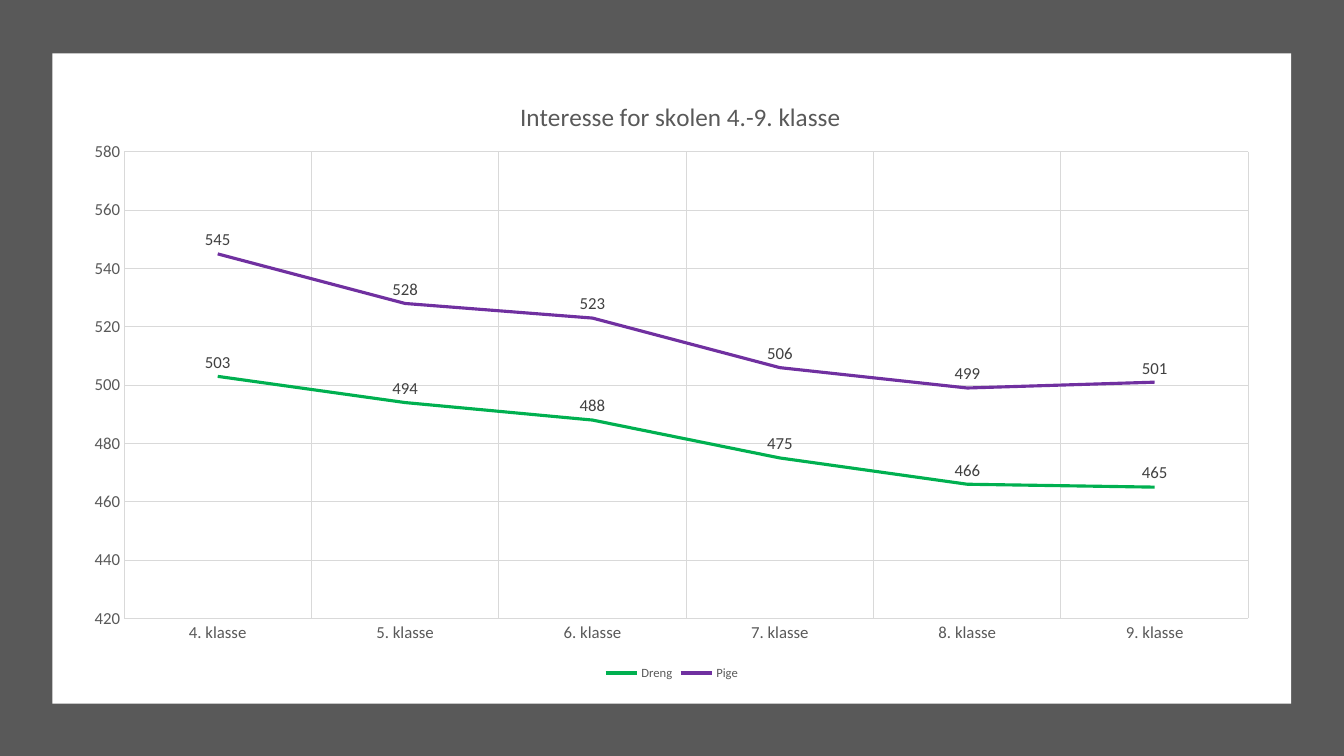
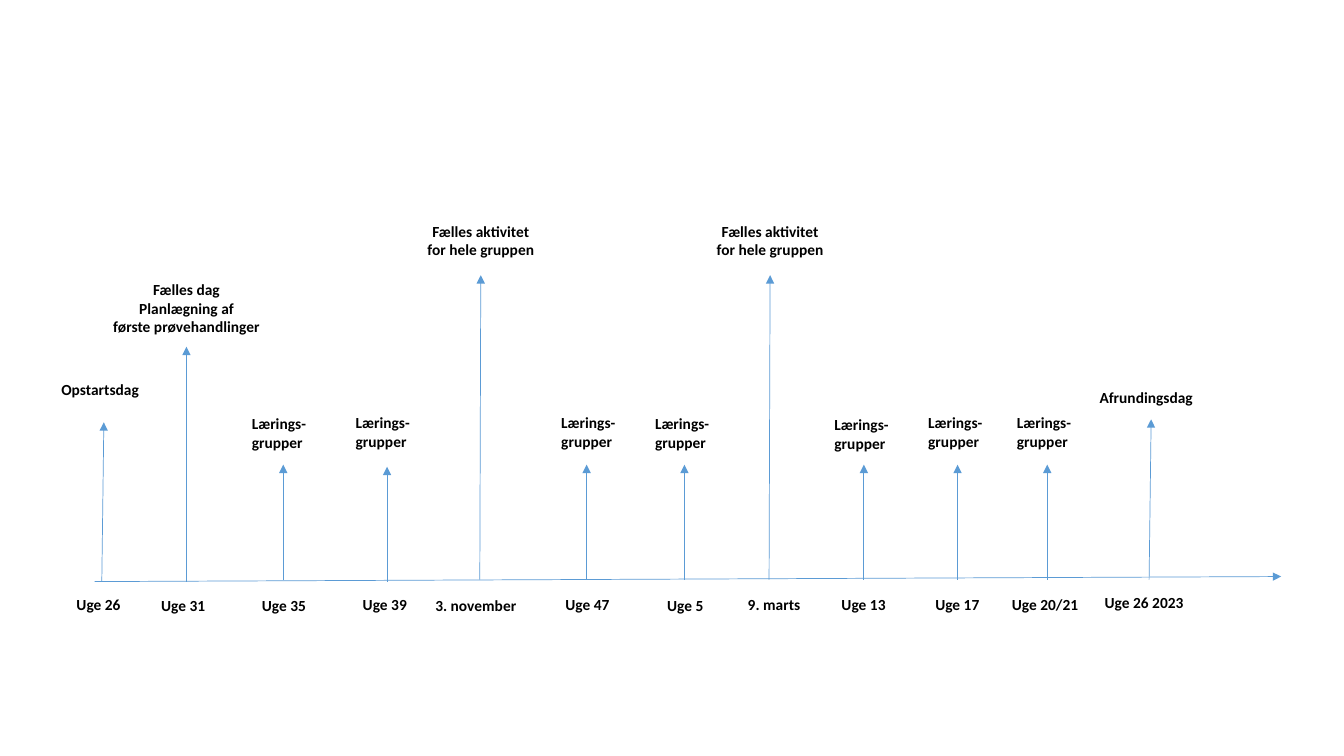
from dataclasses import dataclass

from lxml import etree
from pptx import Presentation
from pptx import util as u
from pptx.chart.data import CategoryChartData
from pptx.dml.color import RGBColor
from pptx.enum import chart as ch
from pptx.enum import shapes, text
from pptx.oxml.ns import qn

SLIDE_W, SLIDE_H = u.Inches(13.333), u.Inches(7.5)
COLUMNS, ROWS = 40, 22.5
FONT = "Calibri"
BLACK, WHITE, GREY, GRID = "000000", "FFFFFF", "595959", "D9D9D9"
LABEL, GREEN, PURPLE, BLUE = "404040", "00B050", "7030A0", "5B9BD5"

GRADES = [f"{grade}. klasse" for grade in range(4, 10)]
INTEREST = [
    ("Dreng", GREEN, (503, 494, 488, 475, 466, 465)),
    ("Pige", PURPLE, (545, 528, 523, 506, 499, 501)),
]


@dataclass
class Event:
    lines: tuple
    width: float
    centred: bool = False


KICKOFF = Event(("Opstartsdag",), 3.33)
PLANNING = Event(("Fælles dag", "Planlægning af", "første prøvehandlinger"), 5.76, True)
LEARNING = Event(("Lærings-", "grupper"), 2.58)
SHARED = Event(("Fælles aktivitet", "for hele gruppen"), 4.26, True)
CLOSING = Event(("Afrundingsdag",), 3.9)

# date, its left, top and width; stem foot; stem tip; event, its left and top
MILESTONES = [
    ("Uge 26", 1.98, 17.55, 2.13, (3.03, 17.31), (3.09, 12.57), KICKOFF, 1.53, 11.16),
    ("Uge 31", 4.5, 17.58, 2.13, (5.55, 17.31), (5.55, 10.32), PLANNING, 2.67, 8.19),
    ("Uge 35", 7.5, 17.58, 1.95, (8.43, 17.25), (8.43, 13.83), LEARNING, 7.2, 12.18),
    ("Uge 39", 10.5, 17.55, 1.95, (11.52, 17.31), (11.52, 13.89), LEARNING, 10.29, 12.15),
    ("3. november", 12.66, 17.58, 3.03, (14.28, 17.25), (14.31, 8.19), SHARED, 12.18, 6.45),
    ("Uge 47", 16.53, 17.55, 1.95, (17.46, 17.25), (17.46, 13.83), LEARNING, 16.41, 12.15),
    ("Uge 5", 19.56, 17.58, 1.71, (20.37, 17.25), (20.37, 13.83), LEARNING, 19.2, 12.18),
    ("9. marts", 21.96, 17.56, 2.19, (22.89, 17.25), (22.92, 8.19), SHARED, 20.79, 6.45),
    ("Uge 13", 24.75, 17.56, 1.95, (25.71, 17.25), (25.71, 13.83), LEARNING, 24.54, 12.21),
    ("Uge 17", 27.54, 17.55, 1.95, (28.5, 17.25), (28.5, 13.83), LEARNING, 27.33, 12.15),
    ("Uge 20/21", 29.82, 17.55, 2.61, (31.17, 17.25), (31.17, 13.83), LEARNING, 29.97, 12.15),
    ("Uge 26 2023", 32.58, 17.49, 3.27, (34.2, 17.25), (34.26, 12.48), CLOSING, 32.43, 11.4),
]


def rgb(value):
    return RGBColor.from_string(value)


def col(n):
    return round(SLIDE_W * n / COLUMNS)


def row(n):
    return round(SLIDE_H * n / ROWS)


def area(left, top, width, height):
    return col(left), row(top), col(width), row(height)


def style_font(font, size, color, bold=False):
    font.name, font.size, font.bold = FONT, u.Pt(size), bold
    font.color.rgb = rgb(color)


def style_line(line, color, width):
    line.color.rgb = rgb(color)
    line.width = u.Pt(width)


def add_panel(slide, color, *place):
    panel = slide.shapes.add_shape(shapes.MSO_SHAPE.RECTANGLE, *area(*place))
    panel.shadow.inherit = False
    panel.fill.solid()
    panel.fill.fore_color.rgb = rgb(color)
    panel.line.fill.background()


def add_caption(slide, lines, left, top, width, centred=False):
    height = 0.33 + 0.54 * len(lines)
    box = slide.shapes.add_textbox(*area(left, top, width, height))
    frame = box.text_frame
    frame.word_wrap = False
    frame.auto_size = text.MSO_AUTO_SIZE.SHAPE_TO_FIT_TEXT
    for i, line in enumerate(lines):
        paragraph = frame.add_paragraph() if i else frame.paragraphs[0]
        if centred:
            paragraph.alignment = text.PP_ALIGN.CENTER
        run = paragraph.add_run()
        run.text = line
        style_font(run.font, 11, BLACK, bold=True)


def add_arrow(slide, start, end):
    arrow = slide.shapes.add_connector(
        shapes.MSO_CONNECTOR.STRAIGHT,
        col(start[0]), row(start[1]), col(end[0]), row(end[1]))
    style_line(arrow.line, BLUE, 0.5)
    etree.SubElement(arrow.line._get_or_add_ln(), qn("a:tailEnd"), type="triangle")
    etree.SubElement(arrow._element.spPr, qn("a:effectLst"))


def place_part(part, index, **shares):
    """Fix a chart part's place, in shares of the chart's size."""
    for old in part.findall(qn("c:layout")):
        part.remove(old)
    layout = etree.Element(qn("c:layout"))
    part.insert(index, layout)
    manual = etree.SubElement(layout, qn("c:manualLayout"))
    if "w" in shares:
        etree.SubElement(manual, qn("c:layoutTarget"), val="inner")
    for mode in ("xMode", "yMode"):
        etree.SubElement(manual, qn(f"c:{mode}"), val="edge")
    for key, share in shares.items():
        etree.SubElement(manual, qn(f"c:{key}"), val=str(share))


def style_axis(axis):
    axis.major_tick_mark = axis.minor_tick_mark = ch.XL_TICK_MARK.NONE
    axis.has_major_gridlines = True
    style_line(axis.major_gridlines.format.line, GRID, 0.75)
    style_font(axis.tick_labels.font, 12, GREY)


def style_series(series, color):
    series.smooth = False
    series.marker.style = ch.XL_MARKER_STYLE.NONE
    style_line(series.format.line, color, 2.25)
    labels = series.data_labels
    labels.show_value = True
    labels.position = ch.XL_LABEL_POSITION.ABOVE
    labels.number_format, labels.number_format_is_linked = "0", False
    style_font(labels.font, 12, LABEL)


def add_interest_chart(slide, *place):
    data = CategoryChartData(number_format="0")
    data.categories = GRADES
    for name, _, scores in INTEREST:
        data.add_series(name, scores)
    chart = slide.shapes.add_chart(ch.XL_CHART_TYPE.LINE, *area(*place), data).chart
    style_font(chart.font, 10, BLACK)

    chart.has_title = True
    title_run = chart.chart_title.text_frame.paragraphs[0].add_run()
    title_run.text = "Interesse for skolen 4.-9. klasse"
    style_font(title_run.font, 18, GREY)
    place_part(chart.element.find(".//" + qn("c:title")), 1, x=0.37, y=0.04)
    place_part(chart.element.find(".//" + qn("c:plotArea")), 0,
               x=0.0445, y=0.1325, w=0.935, h=0.76)

    chart.has_legend = True
    chart.legend.position = ch.XL_LEGEND_POSITION.BOTTOM
    chart.legend.include_in_layout = False
    style_font(chart.legend.font, 9, GREY)

    grades, scores = chart.category_axis, chart.value_axis
    style_axis(grades)
    style_line(grades.format.line, GRID, 0.75)
    style_axis(scores)
    scores.format.line.fill.background()
    scores.minimum_scale, scores.maximum_scale, scores.major_unit = 420, 580, 20
    scores.tick_labels.number_format = "0"
    scores.tick_labels.number_format_is_linked = False

    chart.plots[0].vary_by_categories = False
    for series, (_, color, _) in zip(chart.plots[0].series, INTEREST):
        style_series(series, color)


def build_interest(slide):
    add_panel(slide, GREY, 0, 0, COLUMNS, ROWS)
    add_panel(slide, WHITE, 1.56, 1.59, 36.87, 19.35)
    add_interest_chart(slide, 2.1, 2.1, 35.79, 18.27)


def build_timeline(slide):
    add_arrow(slide, (2.82, 17.31), (38.13, 17.16))
    for date, left, top, width, foot, tip, event, event_left, event_top in MILESTONES:
        add_arrow(slide, foot, tip)
        add_caption(slide, (date,), left, top, width)
        add_caption(slide, event.lines, event_left, event_top, event.width, event.centred)


def main():
    deck = Presentation()
    deck.slide_width, deck.slide_height = SLIDE_W, SLIDE_H
    blank = deck.slide_layouts[6]
    for build in (build_interest, build_timeline):
        build(deck.slides.add_slide(blank))
    deck.save("out.pptx")


if __name__ == "__main__":
    main()
